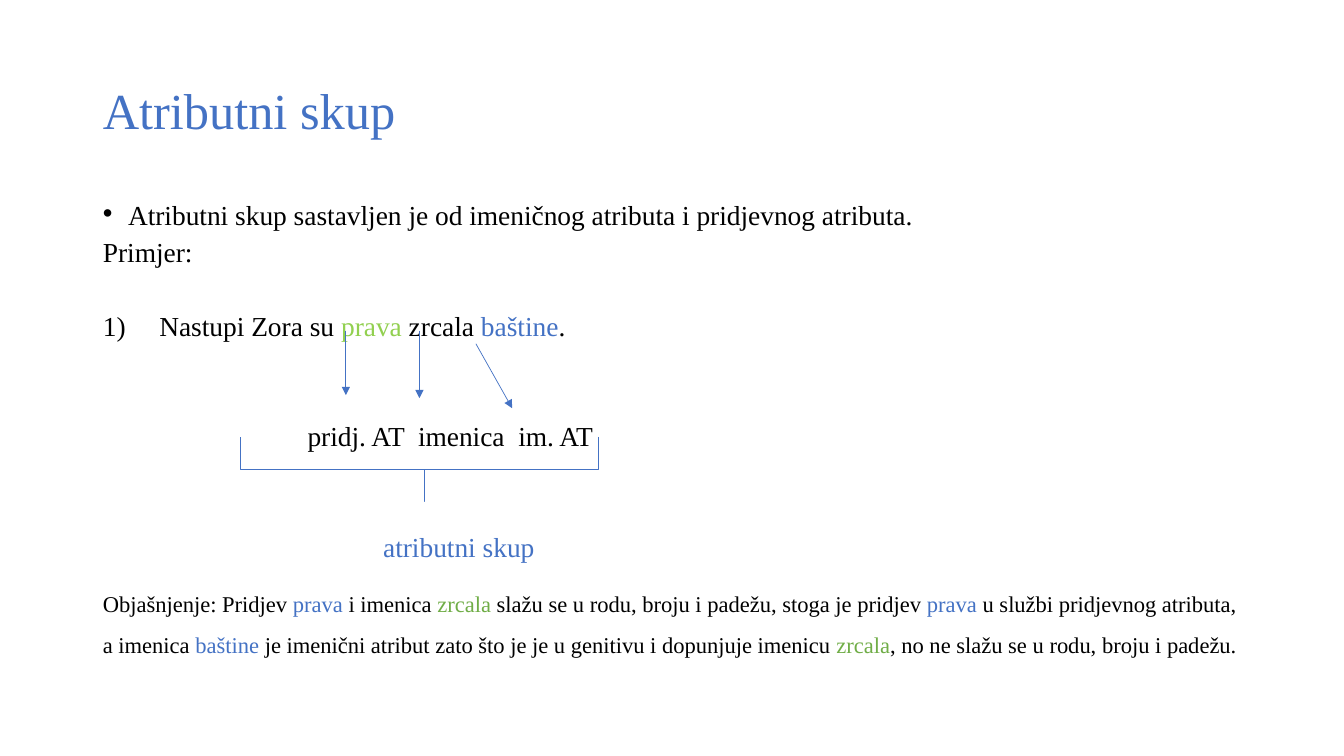
from lxml.etree import SubElement
from pptx import Presentation
from pptx.dml.color import RGBColor
from pptx.enum.shapes import MSO_CONNECTOR, MSO_SHAPE
from pptx.enum.text import MSO_ANCHOR, MSO_AUTO_SIZE, PP_ALIGN
from pptx.oxml.ns import qn
from pptx.util import Inches, Pt

FONT = "Times New Roman"
BLACK, BLUE, LIME, GREEN = "000000", "4472C4", "92D050", "70AD47"
TEXT_SIZE, NOTE_SIZE = 19.6, 16.1
GAP = 10           # points before each paragraph
LINE_PITCH = 26.4  # points from one body line to the next

TITLE = [("Atributni skup", BLUE)]
BULLET = ("a:buChar", {"char": "•"})
NUMBER = ("a:buAutoNum", {"type": "arabicParenR"})
PLAIN = ("a:buNone", {})

# marker, left margin, first-line indent, lines skipped above, size, line spacing, runs
BODY = [
    (BULLET, 0.25, -0.25, 0, TEXT_SIZE, 0.7, [
        ("Atributni skup sastavljen je od imeničnog atributa i pridjevnog atributa.", BLACK)]),
    (PLAIN, 0, 0, 0, TEXT_SIZE, 0.7, [("Primjer:", BLACK)]),
    (NUMBER, 0.56, -0.56, 1, TEXT_SIZE, 0.7, [
        ("Nastupi Zora su ", BLACK), ("prava", LIME), (" zrcala ", BLACK),
        ("baštine", BLUE), (".", BLACK)]),
    (PLAIN, 2.03, 0, 2, TEXT_SIZE, 0.7, [("pridj. AT  imenica  im. AT", BLACK)]),
    (PLAIN, 2.78, 0, 2, TEXT_SIZE, 0.7, [("atributni skup", BLUE)]),
    (PLAIN, 0, 0, 0, NOTE_SIZE, 1.5, [
        ("Objašnjenje: Pridjev ", BLACK), ("prava", BLUE), (" i imenica ", BLACK),
        ("zrcala", GREEN),
        (" slažu se u rodu, broju i padežu, stoga je pridjev ", BLACK), ("prava", BLUE),
        (" u službi pridjevnog atributa, a imenica ", BLACK), ("baštine ", BLUE),
        ("je imenični atribut zato što je je u genitivu i dopunjuje imenicu ", BLACK),
        ("zrcala", GREEN), (", no ne slažu se u rodu, broju i padežu.", BLACK)]),
]

ARROWS = [  # from x, y to x, y
    (3.43, 3.28, 3.43, 3.92),
    (4.16, 3.28, 4.16, 3.95),
    (4.72, 3.41, 5.08, 4.05),
]
BRACE = (3.84, 2.88, 0.64, 3.55)


def color(hex_code):
    return RGBColor.from_string(hex_code)


def place(box, left, top, width, height):
    box.left, box.top = Inches(left), Inches(top)
    box.width, box.height = Inches(width), Inches(height)
    box.text_frame.auto_size = MSO_AUTO_SIZE.NONE
    box.text_frame.word_wrap = True


def add_runs(para, runs, size):
    para.alignment = PP_ALIGN.LEFT
    for text, hex_code in runs:
        span = para.add_run()
        span.text = text
        span.font.name = FONT
        span.font.size = Pt(size)
        span.font.color.rgb = color(hex_code)


def set_marker(para, marker, margin, indent):
    properties = para._p.get_or_add_pPr()
    properties.set("marL", str(Inches(margin)))
    properties.set("indent", str(Inches(indent)))
    tag, attributes = marker
    if marker is not PLAIN:
        font = "Arial" if marker is BULLET else FONT
        SubElement(properties, qn("a:buFont"), typeface=font)
    SubElement(properties, qn(tag), **attributes)


def style_line(shape):
    shape.line.color.rgb = color(BLUE)
    shape.line.width = Pt(0.5)


def add_arrow(page, x1, y1, x2, y2):
    arrow = page.shapes.add_connector(
        MSO_CONNECTOR.STRAIGHT, Inches(x1), Inches(y1), Inches(x2), Inches(y2))
    style_line(arrow)
    SubElement(arrow.line._get_or_add_ln(), qn("a:tailEnd"), type="triangle")
    SubElement(arrow._element.spPr, qn("a:effectLst"))


def main():
    deck = Presentation()
    deck.slide_width, deck.slide_height = Inches(13.33), Inches(7.5)
    page = deck.slides.add_slide(deck.slide_layouts[1])

    title = page.shapes.title
    place(title, 0.92, 0.4, 11.5, 1.45)
    title.text_frame.vertical_anchor = MSO_ANCHOR.MIDDLE
    title_para = title.text_frame.paragraphs[0]
    title_para.line_spacing = 0.9
    add_runs(title_para, TITLE, 36)

    body = page.placeholders[1]
    place(body, 0.92, 2, 11.5, 4.76)
    frame = body.text_frame
    for index, (marker, margin, indent, skipped, size, spacing, runs) in enumerate(BODY):
        para = frame.add_paragraph() if index else frame.paragraphs[0]
        para.line_spacing = spacing
        para.space_before = Pt(GAP + skipped * LINE_PITCH)
        para.space_after = Pt(0)
        set_marker(para, marker, margin, indent)
        add_runs(para, runs, size)

    for arrow in ARROWS:
        add_arrow(page, *arrow)

    brace = page.shapes.add_shape(MSO_SHAPE.LEFT_BRACE, *map(Inches, BRACE))
    brace.rotation = 270
    brace.adjustments[0], brace.adjustments[1] = 0, 0.515
    brace.fill.background()
    brace.shadow.inherit = False
    style_line(brace)

    deck.save("out.pptx")


if __name__ == "__main__":
    main()
